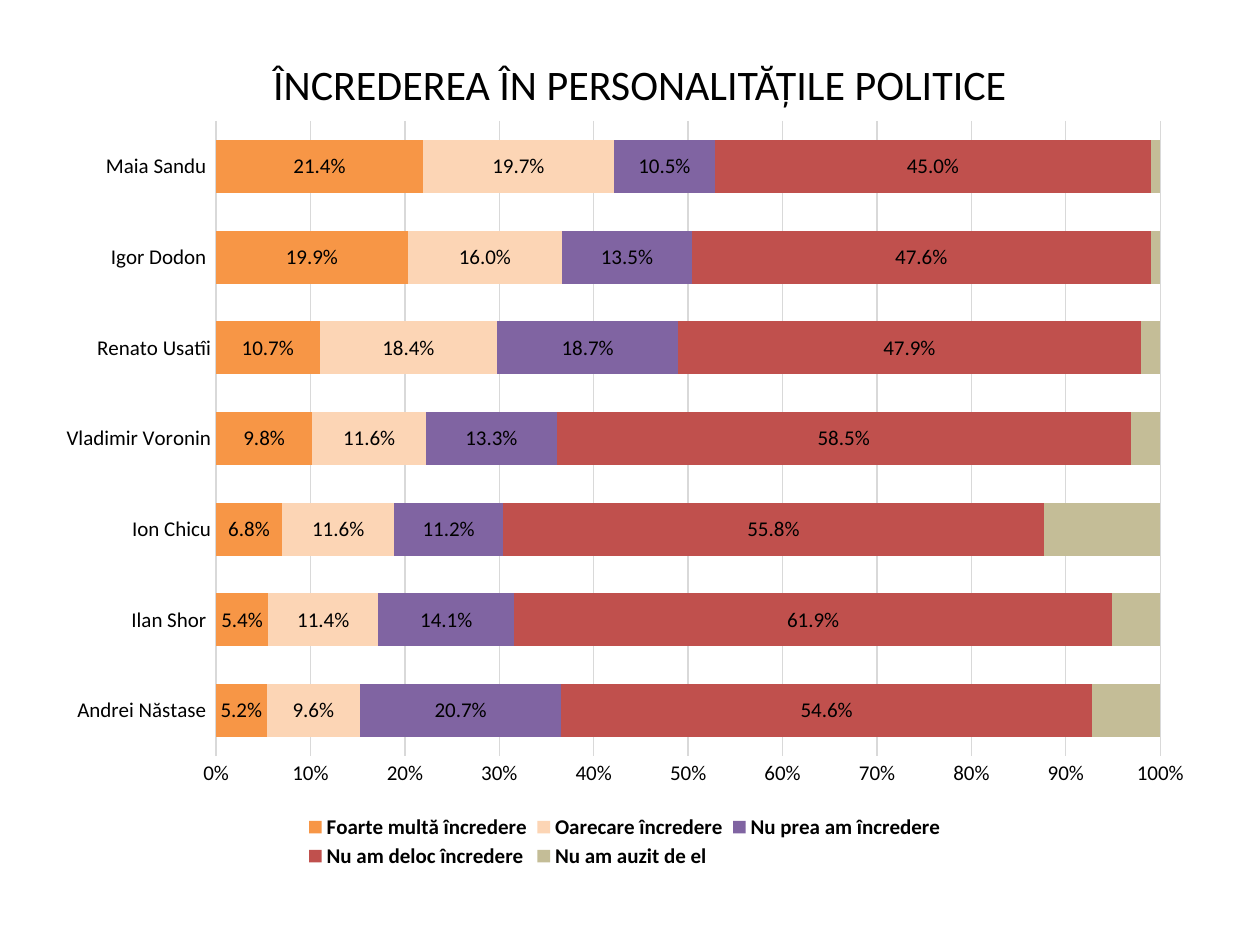
import dataclasses
import typing

import pptx
import pptx.chart.data
import pptx.dml.color
import pptx.enum.chart
import pptx.enum.text
import pptx.oxml
import pptx.oxml.ns
import pptx.util

Cm = pptx.util.Cm
Pt = pptx.util.Pt
RGBColor = pptx.dml.color.RGBColor
qn = pptx.oxml.ns.qn

BLACK = RGBColor(0x00, 0x00, 0x00)
GRID = RGBColor(0xD9, 0xD9, 0xD9)
ORANGE = RGBColor(0xF7, 0x96, 0x46)
PEACH = RGBColor(0xFC, 0xD5, 0xB5)
PURPLE = RGBColor(0x80, 0x64, 0xA2)
RED = RGBColor(0xC0, 0x50, 0x4D)
KHAKI = RGBColor(0xC4, 0xBD, 0x97)
FACE = "Calibri"


@dataclasses.dataclass
class Answer:
    name: str
    color: RGBColor
    shares: tuple[float, ...]  # percent, from the bottom bar up
    label: bool = True


NAMES = ("Andrei Năstase ", "Ilan Shor ", "Ion Chicu", "Vladimir Voronin",
         "Renato Usatîi", "Igor Dodon ", "Maia Sandu ")
ANSWERS = (
    Answer("Foarte multă încredere", ORANGE, (5.2, 5.4, 6.8, 9.8, 10.7, 19.9, 21.4)),
    Answer("Oarecare încredere", PEACH, (9.6, 11.4, 11.6, 11.6, 18.4, 16.0, 19.7)),
    Answer("Nu prea am încredere", PURPLE, (20.7, 14.1, 11.2, 13.3, 18.7, 13.5, 10.5)),
    Answer("Nu am deloc încredere", RED, (54.6, 61.9, 55.8, 58.5, 47.9, 47.6, 45.0)),
    Answer("Nu am auzit de el", KHAKI, (7, 5, 12, 3, 2, 1, 1), label=False),
)


def style(font: typing.Any, size: float = 12, bold: bool = False) -> None:
    for key, value in {"name": FACE, "size": Pt(size), "bold": bold}.items():
        setattr(font, key, value)
    font.color.rgb = BLACK


def place(part: typing.Any, index: int, box: tuple[float, ...], inner: bool = False) -> None:
    """Give a chart part a fixed box, in fractions of the chart."""
    for old in part.findall(qn("c:layout")):
        part.remove(old)
    items = [("layoutTarget", "inner")] if inner else []
    items += [("xMode", "edge"), ("yMode", "edge"), *zip("xywh", box)]
    body = "".join(f'<c:{tag} val="{value}"/>' for tag, value in items)
    part.insert(index, pptx.oxml.parse_xml(
        f'<c:layout {pptx.oxml.ns.nsdecls("c")}>'
        f"<c:manualLayout>{body}</c:manualLayout></c:layout>"))


def add_title(slide: typing.Any) -> None:
    title = slide.shapes.title
    box = {"left": Cm(1.47), "top": Cm(0.64), "width": Cm(22.86), "height": Cm(2.11)}
    for key, value in box.items():
        setattr(title, key, value)
    frame = title.text_frame
    frame.text = "ÎNCREDEREA ÎN PERSONALITĂȚILE POLITICE"
    frame.vertical_anchor = pptx.enum.text.MSO_ANCHOR.MIDDLE
    line = frame.paragraphs[0]
    line.alignment = pptx.enum.text.PP_ALIGN.CENTER
    style(line.runs[0].font, 24)


def format_axes(chart: typing.Any) -> None:
    for axis in (chart.category_axis, chart.value_axis):
        axis.major_tick_mark = pptx.enum.chart.XL_TICK_MARK.NONE
        axis.minor_tick_mark = pptx.enum.chart.XL_TICK_MARK.NONE
        style(axis.tick_labels.font)
    scale = chart.value_axis
    for key, value in {"minimum_scale": 0, "maximum_scale": 1, "major_unit": 0.1,
                       "has_major_gridlines": True}.items():
        setattr(scale, key, value)
    scale.tick_labels.number_format = "0%"
    scale.tick_labels.number_format_is_linked = False
    scale.format.line.fill.background()
    for line in (chart.category_axis.format.line, scale.major_gridlines.format.line):
        line.color.rgb = GRID
        line.width = Pt(0.75)


def format_bars(plot: typing.Any) -> None:
    for key, value in {"gap_width": 71, "overlap": 100, "vary_by_categories": False}.items():
        setattr(plot, key, value)
    for bar, answer in zip(plot.series, ANSWERS):
        bar.format.fill.solid()
        bar.format.fill.fore_color.rgb = answer.color
        if answer.label:
            labels = bar.data_labels
            for key, value in {"show_value": True, "number_format": "0.0%",
                               "number_format_is_linked": False}.items():
                setattr(labels, key, value)
            style(labels.font)


def add_chart(slide: typing.Any) -> None:
    data = pptx.chart.data.CategoryChartData(number_format="0.0%")
    data.categories = NAMES
    for answer in ANSWERS:
        data.add_series(answer.name, [round(share / 100, 3) for share in answer.shares])
    chart = slide.shapes.add_chart(
        pptx.enum.chart.XL_CHART_TYPE.BAR_STACKED_100,
        Cm(0.86), Cm(2.13), Cm(23.47), Cm(15.52), data).chart
    style(chart.font)
    chart.has_title = False
    format_axes(chart)
    format_bars(chart.plots[0])
    chart.has_legend = True
    legend = chart.legend
    legend.position = pptx.enum.chart.XL_LEGEND_POSITION.BOTTOM
    legend.include_in_layout = False
    style(legend.font, bold=True)
    space = chart.element.chart if hasattr(chart, "element") else chart._chartSpace.chart
    place(space.find(qn("c:plotArea")), 0, (0.149, 0.02, 0.811, 0.825), inner=True)
    place(space.find(qn("c:legend")), 1, (0.22, 0.916, 0.56, 0.08))


def main() -> None:
    deck = pptx.Presentation()
    deck.slide_width, deck.slide_height = Cm(25.4), Cm(19.05)
    slide = deck.slides.add_slide(deck.slide_layouts[5])
    add_title(slide)
    add_chart(slide)
    deck.save("out.pptx")


if __name__ == "__main__":
    main()
